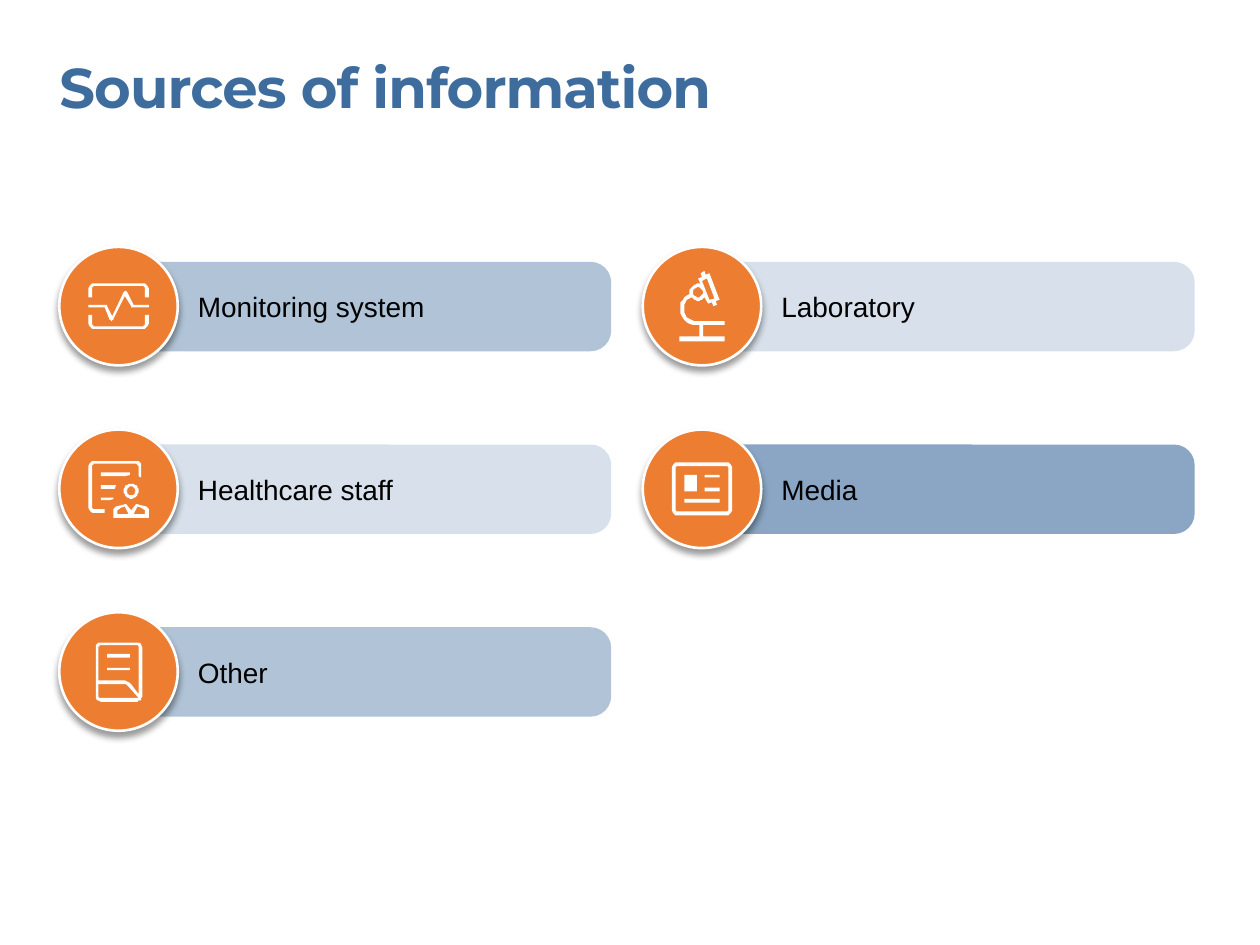
"""Build the "Sources of information" slide with five labelled icon bars."""
import math

import pptx
import pptx.dml.color
import pptx.enum.shapes
import pptx.enum.text
import pptx.oxml
import pptx.oxml.ns
import pptx.util

Pt = pptx.util.Pt
SHAPES = pptx.enum.shapes.MSO_SHAPE
COLOURS = {"blue": "3D6C9D", "orange": "ED7D31", "white": "FFFFFF", "black": "000000"}
TITLE_FORMAT = {"name": "Montserrat", "size": Pt(32), "bold": True}
LABEL_FORMAT = {"name": "Arial", "size": Pt(16)}
FRAME_FORMAT = {"margin_left": 0, "margin_top": 0, "margin_right": 0, "margin_bottom": 0,
                "word_wrap": True,
                "auto_size": pptx.enum.text.MSO_AUTO_SIZE.SHAPE_TO_FIT_TEXT}
LEFT, TOP = 33.9, 141.1
COLUMN_STEP, ROW_STEP = 333.4, 104.4
DIAMETER = 67.7
ICON_UNIT = 0.72


def arc(x, y, radius, start, end):
    """Return points along an arc, with angles in degrees clockwise from the right."""
    steps = max(2, round(abs(end - start) / 12))
    angles = [math.radians(start + (end - start) * i / steps) for i in range(steps + 1)]
    return [(x + radius * math.cos(a), y + radius * math.sin(a)) for a in angles]


def box(left, top, right, bottom, radius=0):
    """Return the corners of a rectangle, each with its rounding radius."""
    return [(left, top, radius), (right, top, radius),
            (right, bottom, radius), (left, bottom, radius)]


def rounded(points):
    """Replace every corner that has a radius by a short curve."""
    result = []
    for i, (x, y, *rest) in enumerate(points):
        radius = rest[0] if rest else 0
        if not radius:
            result.append((x, y))
            continue
        ends = []
        for other in (points[i - 1], points[(i + 1) % len(points)]):
            share = radius / math.dist((x, y), other[:2])
            ends.append((x + (other[0] - x) * share, y + (other[1] - y) * share))
        for t in (0, 0.25, 0.5, 0.75, 1):
            weights = ((1 - t) ** 2, 2 * t * (1 - t), t ** 2)
            corner = (ends[0], (x, y), ends[1])
            result.append(tuple(sum(w * p[k] for w, p in zip(weights, corner))
                                for k in (0, 1)))
    return result


def monitor_icon():
    """Return the outlines of a screen with a pulse line."""
    bracket = [(-23.5, -7), (-23.5, -18.3, 4), (23.5, -18.3, 4), (23.5, -7),
               (21, -7), (21, -15.8, 2), (-21, -15.8, 2), (-21, -7)]
    pulse = [(-23.5, -1.3), (-9.5, -1.3, 1), (-5, 8), (4.7, -12, 1.5), (6.2, -12, 1),
             (12, -1.3), (23.5, -1.3), (23.5, 1.3), (10.3, 1.3, 1), (5, -8),
             (-4.5, 11.8, 1.5), (-6.2, 11.8, 1), (-11, 1.3), (-23.5, 1.3)]
    return [bracket, [(x, -y, *rest) for x, y, *rest in bracket], pulse]


def staff_icon():
    """Return the outlines of a document with a person."""
    page = [(-11, 19), (-23.5, 19, 4), (-23.5, -22, 4), (18, -22, 4), (18, -9),
            (15.5, -10.3), (15.5, -19.8, 2), (-21, -19.8, 2), (-21, 16.5, 2), (-11, 16.5)]
    shoulders = [(-3.7, 23), (-3.7, 15, 2), (2, 12.6), (6, 12), (10, 17.3),
                 (14, 12), (18, 12.6), (23.7, 15, 2), (23.7, 23)]
    sleeve = [(-1.2, 20.3), (8.5, 20.3), (5, 14.5), (2, 15.2), (-1.2, 17)]
    lines = [[(-14, -12.6), (9, -12.6), (9, -11.3), (5, -10), (-14, -10)],
             [(-14, -2.6), (-1.5, -2.6), (-3, 0), (-14, 0)],
             [(-14, 6.8), (-4, 6.8), (-4, 7.5), (-7, 9.3), (-14, 9.3)]]
    head = [arc(10, 1.7, radius, 0, 360) for radius in (6, 3.5)]
    return [page, shoulders, sleeve, [(20 - x, y) for x, y in sleeve], *lines, *head]


def document_icon():
    """Return the outlines of a page with a folded lower corner."""
    upper = [(-15.8, 7.2), (-15.8, -20.8, 2), (16, -20.8, 2), (16, 18), (7.5, 7.2, 4)]
    lower = [(-15.8, 9.8), (6, 9.8, 3), (15.5, 21.2), (-15.8, 21.2, 2)]
    return [box(-18.4, -23.4, 18.6, 23.6, 4), upper, lower,
            box(-9, -13.6, 9, -11), box(-9, -3.2, 9, -0.6)]


def microscope_icon():
    """Return the outlines of a microscope."""
    body = [(-18.5, 27.7), (-18.5, 24.4), (-2.5, 24.4), (-2.5, 15.2),
            *arc(-4.3, 2, 13.2, 90, 250), *arc(-3.2, -11, 6.7, 175, 290),
            (-3, -22), (-0.2, -23), (-1.2, -26.3), (2, -27.5), (3.3, -24.7), (6, -25.7),
            (14, -5), (11.2, -4), (12.2, -1), (8.8, 0.3), (7.7, -2.7), (4.7, -1.5),
            *arc(-3.2, -11, 6.7, 35, 140), *arc(-4.3, 2, 10.2, 247, 90),
            (18.5, 12.2), (18.5, 15.2), (0.8, 15.2), (0.8, 24.4), (18.5, 24.4), (18.5, 27.7)]
    tube = [(6, -5), (10, -6.5), (4, -22), (0.2, -20.5)]
    return [body, tube, arc(-3.2, -11, 3.8, 0, 360)]


def newspaper_icon():
    """Return the outlines of a newspaper page."""
    return [box(-23.5, -21, 23.5, 21, 4), box(-21, -18.5, 21, 18.5, 2),
            box(-13.5, 8.5, 13.5, 11), box(-13.5, -11.3, -4.5, 1.5),
            box(1.5, -1, 13.5, 1.5), box(1.5, -11.3, 13.5, -8.7)]


def paint(shape, colour):
    """Give a shape a plain fill and neither line nor shadow."""
    shape.shadow.inherit = False
    shape.fill.solid()
    shape.fill.fore_color.rgb = pptx.dml.color.RGBColor.from_string(COLOURS[colour])
    shape.line.fill.background()


def add_bar(slide, left, top, opacity):
    """Add a translucent rounded bar."""
    shape = slide.shapes.add_shape(SHAPES.ROUNDED_RECTANGLE,
                                   Pt(left), Pt(top), Pt(281.5), Pt(51.1))
    shape.adjustments[0] = 0.23
    paint(shape, "blue")
    colour = shape.element.spPr.find(".//" + pptx.oxml.ns.qn("a:srgbClr"))
    alpha = pptx.oxml.parse_xml(
        f'<a:alpha {pptx.oxml.ns.nsdecls("a")} val="{opacity * 1000}"/>')
    colour.append(alpha)


def add_text(slide, left, top, width, height, text, colour, text_format):
    """Add a text box with one formatted run and return its font."""
    frame = slide.shapes.add_textbox(Pt(left), Pt(top), Pt(width), Pt(height)).text_frame
    for name, value in FRAME_FORMAT.items():
        setattr(frame, name, value)
    run = frame.paragraphs[0].add_run()
    run.text = text
    for name, value in text_format.items():
        setattr(run.font, name, value)
    run.font.color.rgb = pptx.dml.color.RGBColor.from_string(COLOURS[colour])
    return run.font


def add_disc(slide, left, top):
    """Add an orange disc with a white rim and a soft shadow."""
    shape = slide.shapes.add_shape(SHAPES.OVAL, Pt(left), Pt(top), Pt(DIAMETER), Pt(DIAMETER))
    paint(shape, "orange")
    shape.line.color.rgb = pptx.dml.color.RGBColor.from_string(COLOURS["white"])
    shape.line.width = Pt(1.5)
    effects = shape.element.spPr.find(pptx.oxml.ns.qn("a:effectLst"))
    effects.append(pptx.oxml.parse_xml(
        f'<a:outerShdw {pptx.oxml.ns.nsdecls("a")} blurRad="{Pt(4)}" dist="{Pt(3)}" '
        f'dir="5400000" rotWithShape="0"><a:srgbClr val="{COLOURS["black"]}">'
        '<a:alpha val="40000"/></a:srgbClr></a:outerShdw>'))


def add_icon(slide, x, y, outlines):
    """Add a white icon centred on a point, from outlines in icon units."""
    paths = [rounded(outline) for outline in outlines]
    builder = slide.shapes.build_freeform(*paths[0][0], scale=Pt(ICON_UNIT))
    for i, path in enumerate(paths):
        if i:
            builder.move_to(*path[0])
        builder.add_line_segments(path[1:], close=True)
    paint(builder.convert_to_shape(Pt(x), Pt(y)), "white")


def main():
    """Build and save the slide."""
    presentation = pptx.Presentation()
    presentation.slide_width, presentation.slide_height = Pt(720), Pt(540)
    slide = presentation.slides.add_slide(presentation.slide_layouts[6])
    title_font = add_text(slide, LEFT, 30.2, 615.6, 38.9, "Sources of information",
                          "blue", TITLE_FORMAT)
    title_font._element.set("spc", "-50")
    sources = [(0, 0, "Monitoring system", 40, 216.7, monitor_icon),
               (0, 1, "Healthcare staff", 20, 216.7, staff_icon),
               (0, 2, "Other", 40, 179.3, document_icon),
               (1, 0, "Laboratory", 20, 210.2, microscope_icon),
               (1, 1, "Media", 60, 198.7, newspaper_icon)]
    for column, row, label, opacity, width, icon in sources:
        left, top = LEFT + column * COLUMN_STEP, TOP + row * ROW_STEP
        add_bar(slide, left + DIAMETER / 2, top + 8.5, opacity)
        add_text(slide, left + 79.2, top + 24.5, width, 19.4, label, "black", LABEL_FORMAT)
        add_disc(slide, left, top)
        add_icon(slide, left + DIAMETER / 2, top + DIAMETER / 2, icon())
    presentation.save("out.pptx")


if __name__ == "__main__":
    main()
